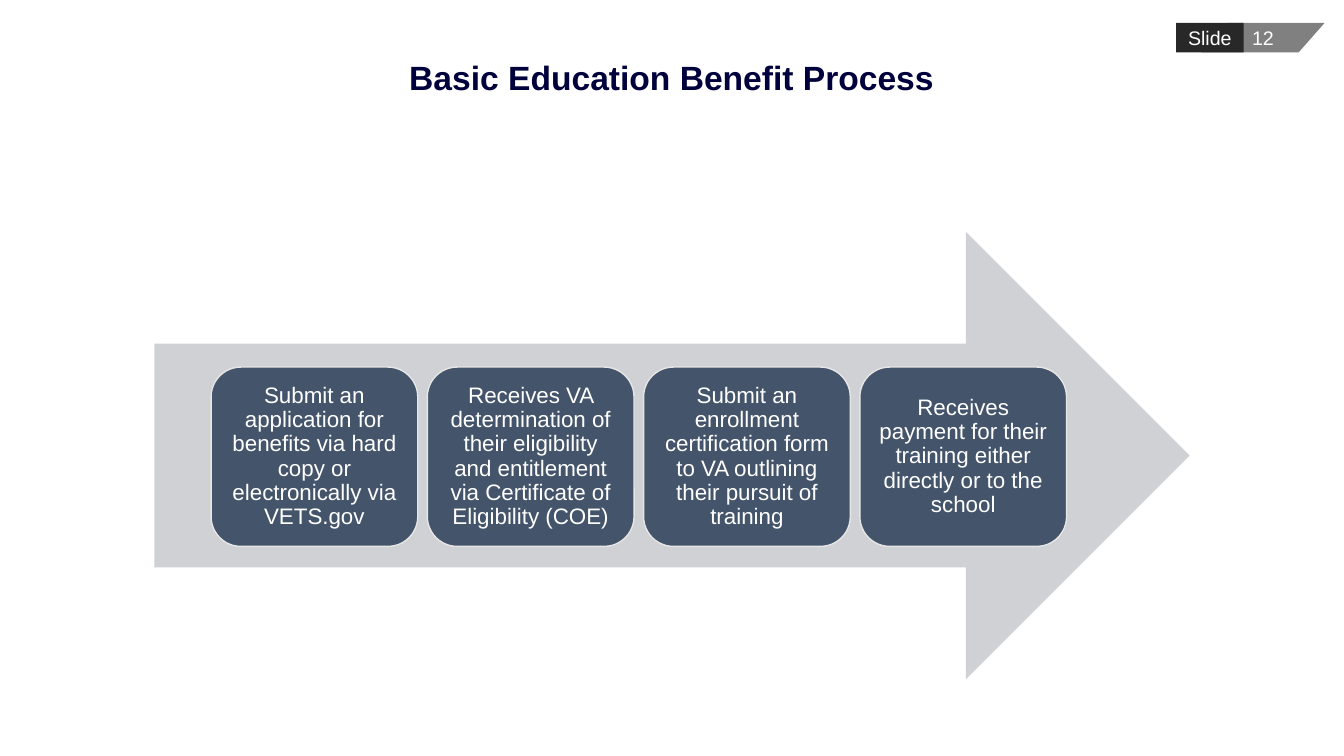
from pptx import Presentation
from pptx.dml.color import RGBColor
from pptx.enum.shapes import MSO_SHAPE
from pptx.enum.text import MSO_ANCHOR, PP_ALIGN
from pptx.util import Cm, Pt

PARALLELOGRAM = MSO_SHAPE.PARALLELOGRAM
RECTANGLE = MSO_SHAPE.RECTANGLE
RIGHT_ARROW = MSO_SHAPE.RIGHT_ARROW
ROUNDED_RECTANGLE = MSO_SHAPE.ROUNDED_RECTANGLE
MIDDLE = MSO_ANCHOR.MIDDLE
CENTER = PP_ALIGN.CENTER

WHITE = RGBColor(0xFF, 0xFF, 0xFF)
NAVY = RGBColor(0x00, 0x00, 0x3C)
SLATE = RGBColor(0x44, 0x54, 0x6A)
PALE_GRAY = RGBColor(0xE7, 0xE6, 0xE6)
ARROW_GRAY = RGBColor(0xCF, 0xD1, 0xD4)
TAG_GRAY = RGBColor(0x80, 0x80, 0x80)
TAG_BLACK = RGBColor(0x28, 0x28, 0x28)

STEPS = [
    "Submit an application for benefits via hard copy or electronically via VETS.gov",
    "Receives VA determination of their eligibility and entitlement via Certificate of Eligibility (COE)",
    "Submit an enrollment certification form to VA outlining their pursuit of training",
    "Receives payment for their training either directly or to the school",
]
STEP_LEFT, STEP_TOP = 5.32, 9.25
STEP_WIDTH, STEP_HEIGHT = 5.21, 4.52
STEP_PITCH = 5.45


class ProcessSlide:
    font_name = "Arial"

    def __init__(self, presentation):
        self.slide = presentation.slides.add_slide(presentation.slide_layouts[6])

    def set_text(self, shape, text, size, color, bold=False, wrap=True, inset=0.0, spacing=1.0):
        text_frame = shape.text_frame
        text_frame.text = text
        text_frame.word_wrap = wrap
        text_frame.vertical_anchor = MIDDLE
        text_frame.margin_left = text_frame.margin_right = Cm(inset)
        text_frame.margin_top = text_frame.margin_bottom = Cm(inset)
        paragraph = text_frame.paragraphs[0]
        paragraph.alignment = CENTER
        paragraph.line_spacing = spacing
        font = paragraph.runs[0].font
        font.name = self.font_name
        font.size = Pt(size)
        font.bold = bold
        font.color.rgb = color

    def add_shape(self, kind, left, top, width, height, fill, line=None):
        shape = self.slide.shapes.add_shape(kind, Cm(left), Cm(top), Cm(width), Cm(height))
        shape.shadow.inherit = False
        shape.fill.solid()
        shape.fill.fore_color.rgb = fill
        if line is None:
            shape.line.fill.background()
        else:
            shape.line.color.rgb = line
            shape.line.width = Pt(1)
        return shape

    def add_title(self, text):
        box = self.slide.shapes.add_textbox(Cm(1.52), Cm(1.57), Cm(30.81), Cm(0.89))
        self.set_text(box, text, 24, NAVY, bold=True, spacing=0.9)

    def add_slide_tag(self, label, number):
        number_tag = self.add_shape(PARALLELOGRAM, 30.28, 0.58, 3.1, 0.74, TAG_GRAY)
        number_tag.adjustments[0] = 0.88
        label_tag = self.add_shape(RECTANGLE, 29.64, 0.58, 1.7, 0.74, TAG_BLACK)
        for tag, text in ((number_tag, number), (label_tag, label)):
            self.set_text(tag, text, 14, WHITE, wrap=False)

    def add_step(self, index, text):
        left = STEP_LEFT + index * STEP_PITCH
        box = self.add_shape(ROUNDED_RECTANGLE, left, STEP_TOP, STEP_WIDTH, STEP_HEIGHT, SLATE, PALE_GRAY)
        self.set_text(box, text, 16, WHITE, inset=0.17, spacing=0.9)


def main():
    presentation = Presentation()
    presentation.slide_width = Cm(33.87)
    presentation.slide_height = Cm(19.05)
    process = ProcessSlide(presentation)
    process.add_slide_tag("Slide", "12")
    process.add_title("Basic Education Benefit Process")
    process.add_shape(RIGHT_ARROW, 3.89, 5.84, 26.09, 11.28, ARROW_GRAY)
    for index, text in enumerate(STEPS):
        process.add_step(index, text)
    presentation.save("out.pptx")


if __name__ == "__main__":
    main()
